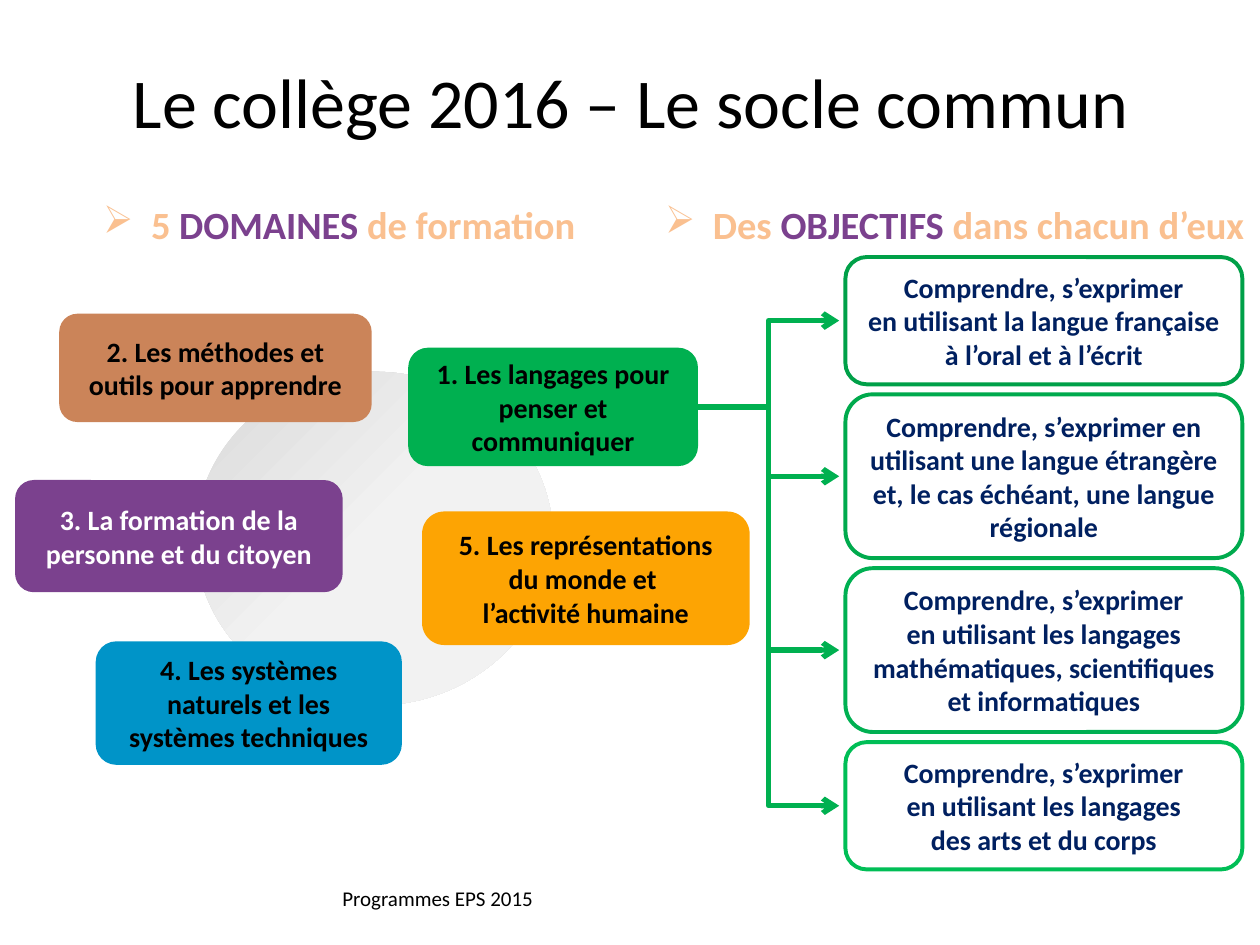
from dataclasses import dataclass

from lxml.etree import SubElement
from pptx import Presentation
from pptx.dml.color import RGBColor
from pptx.enum.shapes import MSO_CONNECTOR, MSO_SHAPE
from pptx.enum.text import MSO_ANCHOR, PP_ALIGN
from pptx.oxml import parse_xml
from pptx.oxml.ns import nsdecls, qn
from pptx.util import Inches, Pt


@dataclass(frozen=True)
class Theme:
    font: str = "Calibri"
    black: str = "000000"
    white: str = "FFFFFF"
    navy: str = "002060"
    peach: str = "FAC090"
    purple: str = "7B418E"
    green: str = "00B050"
    brown: str = "CB8459"
    blue: str = "0094C8"
    orange: str = "FDA403"
    disc_light: str = "F2F2F2"
    disc_dark: str = "D9D9D9"
    title_size: int = 40
    heading_size: int = 22
    box_size: int = 16
    footer_size: int = 12


THEME = Theme()

# Content
TITLE = "Le collège 2016 – Le socle commun"
FOOTER = "Programmes EPS 2015"

# (left, width, wraps, (before, key word, after))
HEADINGS = [
    (0.72, 4.32, True, ("5 ", "DOMAINES", " de formation")),
    (5.18, 4.84, False, ("Des ", "OBJECTIFS ", "dans chacun d’eux")),
]

# (text, fill, text colour, (left, top, width, height)), back to front
DOMAINS = [
    ("4. Les systèmes naturels et les systèmes techniques",
     THEME.blue, THEME.black, (0.76, 5.09, 2.43, 0.98)),
    ("3. La formation de la personne et du citoyen",
     THEME.purple, THEME.white, (0.12, 3.81, 2.6, 0.89)),
    ("2. Les méthodes et outils pour apprendre",
     THEME.brown, THEME.black, (0.47, 2.49, 2.48, 0.86)),
    ("5. Les représentations du monde et \nl’activité humaine",
     THEME.orange, THEME.black, (3.35, 4.06, 2.6, 1.06)),
    ("1. Les langages pour penser et communiquer",
     THEME.green, THEME.black, (3.24, 2.76, 2.3, 0.94)),
]

# (text, outline, height)
OBJECTIVES = [
    ("Comprendre, s’exprimer\nen utilisant la langue française à l’oral et à l’écrit",
     "00A048", 1.01),
    ("Comprendre, s’exprimer en utilisant une langue étrangère et, "
     "le cas échéant, une langue régionale", "00AA4D", 1.3),
    ("Comprendre, s’exprimer\nen utilisant les langages mathématiques, "
     "scientifiques et informatiques", "00B052", 1.3),
    ("Comprendre, s’exprimer\nen utilisant les langages\ndes arts et du corps",
     "00BE56", 1.01),
]

# Layout, in inches
DISC = (1.55, 2.95, 2.84, 2.65)
TITLE_AREA = (0.51, 0.13, 8.99, 1.34)
FOOTER_AREA = (1.81, 6.97, 3.33, 0.32)
HEADING_TOP, HEADING_HEIGHT, HEADING_INDENT = 1.55, 0.47, 0.38
OBJECTIVE_LEFT, OBJECTIVE_TOP, OBJECTIVE_WIDTH, OBJECTIVE_GAP = 6.71, 2.04, 3.15, 0.08
ARROW_GAP = 0.05


def rgb(colour):
    return RGBColor.from_string(colour)


def write(shape, text, size, colour, bold=False):
    frame = shape.text_frame
    frame.word_wrap = True
    frame.vertical_anchor = MSO_ANCHOR.MIDDLE
    paragraph = frame.paragraphs[0]
    paragraph.text = text
    paragraph.alignment = PP_ALIGN.CENTER
    style(paragraph.font, size, colour, bold)


def style(font, size, colour, bold):
    font.name, font.size, font.bold = THEME.font, Pt(size), bold
    font.color.rgb = rgb(colour)


def add_plain_text(slide, area, text, size):
    write(slide.shapes.add_textbox(*map(Inches, area)), text, size, THEME.black)


def add_box(slide, area, text, colour, fill=None, outline=None):
    box = slide.shapes.add_shape(MSO_SHAPE.ROUNDED_RECTANGLE, *map(Inches, area))
    box.shadow.inherit = False
    if fill:
        box.fill.solid()
        box.fill.fore_color.rgb = rgb(fill)
    else:
        box.fill.background()
    if outline:
        box.line.color.rgb = rgb(outline)
        box.line.width = Pt(2.25)
    else:
        box.line.fill.background()
    write(box, text, THEME.box_size, colour, bold=True)


def add_disc(slide):
    disc = slide.shapes.add_shape(MSO_SHAPE.OVAL, *map(Inches, DISC))
    disc.shadow.inherit = False
    disc.line.fill.background()
    stops = "".join(
        f'<a:gs pos="{share * 1000}"><a:srgbClr val="{colour}"/></a:gs>'
        for share, colour in ((0, THEME.disc_light), (50, THEME.disc_light),
                              (100, THEME.disc_dark)))
    gradient = parse_xml(
        f'<a:gradFill {nsdecls("a")} rotWithShape="1"><a:gsLst>{stops}</a:gsLst>'
        '<a:path path="circle"><a:fillToRect l="100000" t="100000"/></a:path>'
        '</a:gradFill>')
    disc._element.spPr.find(qn("a:prstGeom")).addnext(gradient)


def add_heading(slide, left, width, wraps, parts):
    heading = slide.shapes.add_textbox(
        *map(Inches, (left, HEADING_TOP, width, HEADING_HEIGHT)))
    heading.text_frame.word_wrap = wraps
    paragraph = heading.text_frame.paragraphs[0]
    for part, colour in zip(parts, (THEME.peach, THEME.purple, THEME.peach)):
        run = paragraph.add_run()
        run.text = part
        style(run.font, THEME.heading_size, colour, True)
    properties = paragraph._p.get_or_add_pPr()
    properties.set("marL", str(Inches(HEADING_INDENT)))
    properties.set("indent", str(-Inches(HEADING_INDENT)))
    SubElement(properties, qn("a:buChar")).set("char", "➢")


def add_arrow(slide, start, end):
    arrow = slide.shapes.add_connector(MSO_CONNECTOR.ELBOW, *map(Inches, start + end))
    arrow.line.color.rgb = rgb(THEME.green)
    arrow.line.width = Pt(3)
    SubElement(arrow.line._get_or_add_ln(), qn("a:tailEnd")).set("type", "arrow")
    SubElement(arrow._element.spPr, qn("a:effectLst"))


def main():
    deck = Presentation()
    deck.slide_width, deck.slide_height = Inches(10), Inches(7.5)
    slide = deck.slides.add_slide(deck.slide_layouts[6])

    # Title and domains around the disc
    add_disc(slide)
    add_plain_text(slide, TITLE_AREA, TITLE, THEME.title_size)
    for text, fill, colour, area in DOMAINS:
        add_box(slide, area, text, colour, fill=fill)
    for heading in HEADINGS:
        add_heading(slide, *heading)

    # Objectives stacked on the right, each reached from the first domain
    left, top, width, height = DOMAINS[-1][3]
    start = (left + width, top + height / 2)
    top = OBJECTIVE_TOP
    for text, outline, height in OBJECTIVES:
        add_box(slide, (OBJECTIVE_LEFT, top, OBJECTIVE_WIDTH, height),
                text, THEME.navy, outline=outline)
        add_arrow(slide, start, (OBJECTIVE_LEFT - ARROW_GAP, top + height / 2))
        top += height + OBJECTIVE_GAP

    add_plain_text(slide, FOOTER_AREA, FOOTER, THEME.footer_size)
    deck.save("out.pptx")


if __name__ == "__main__":
    main()
